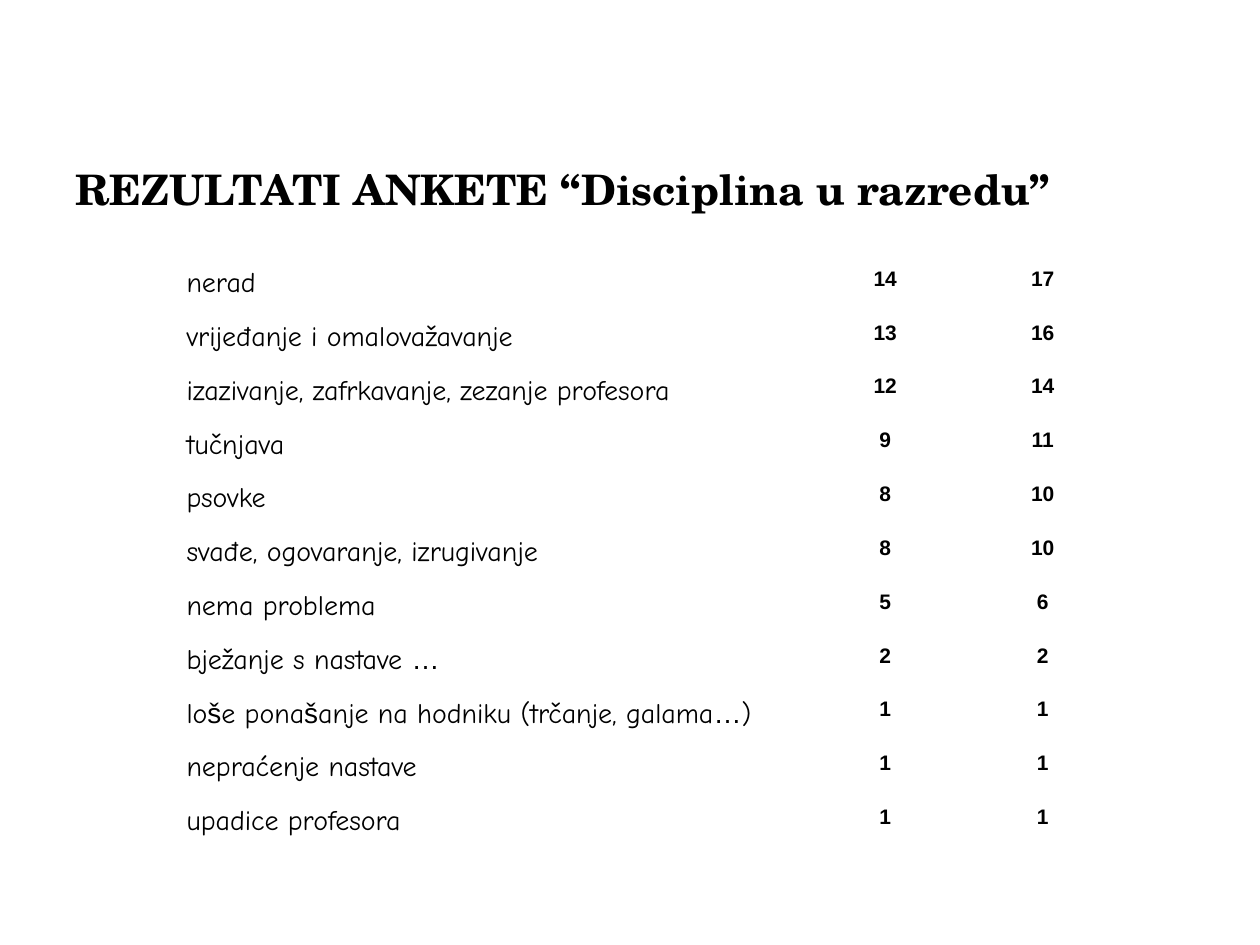
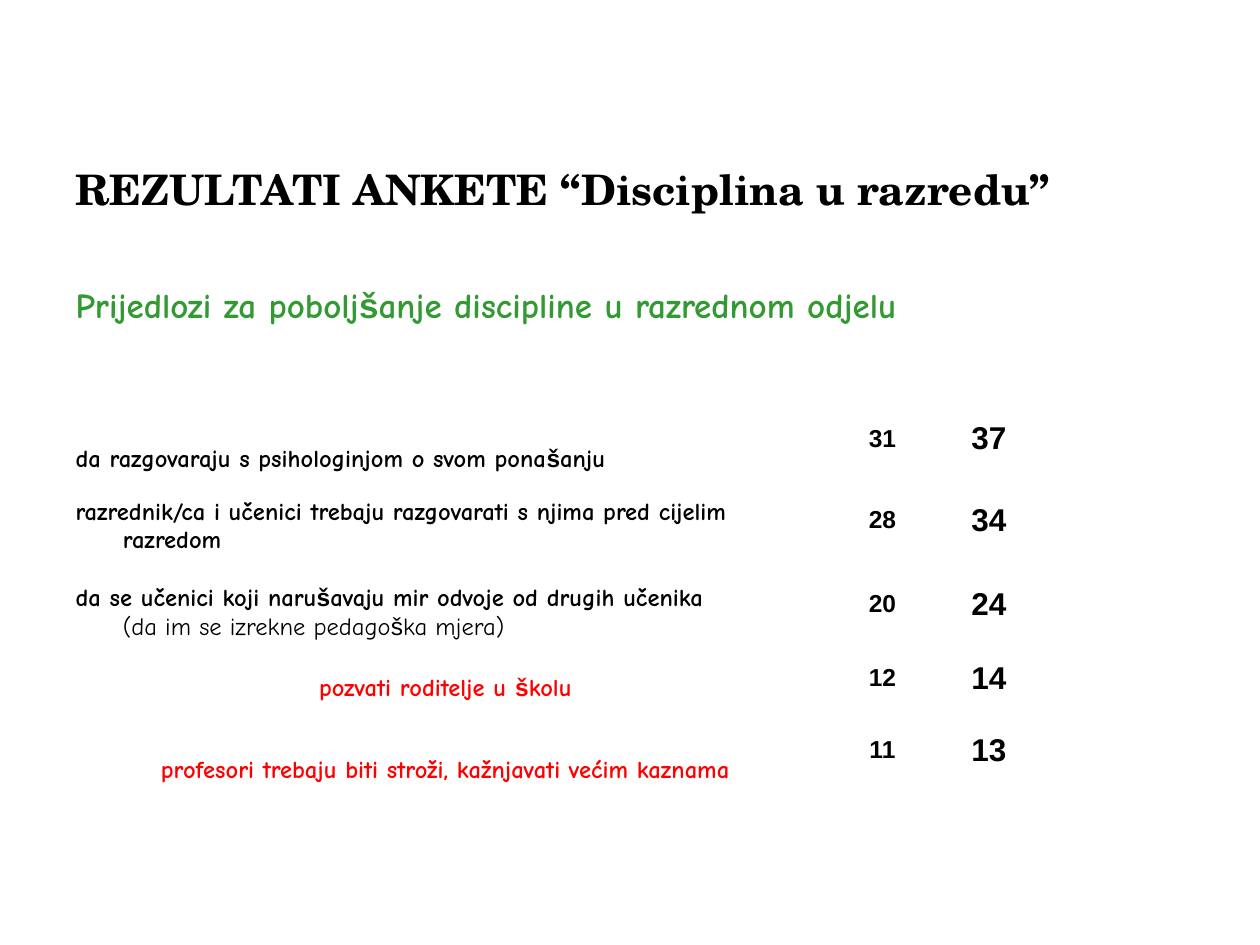
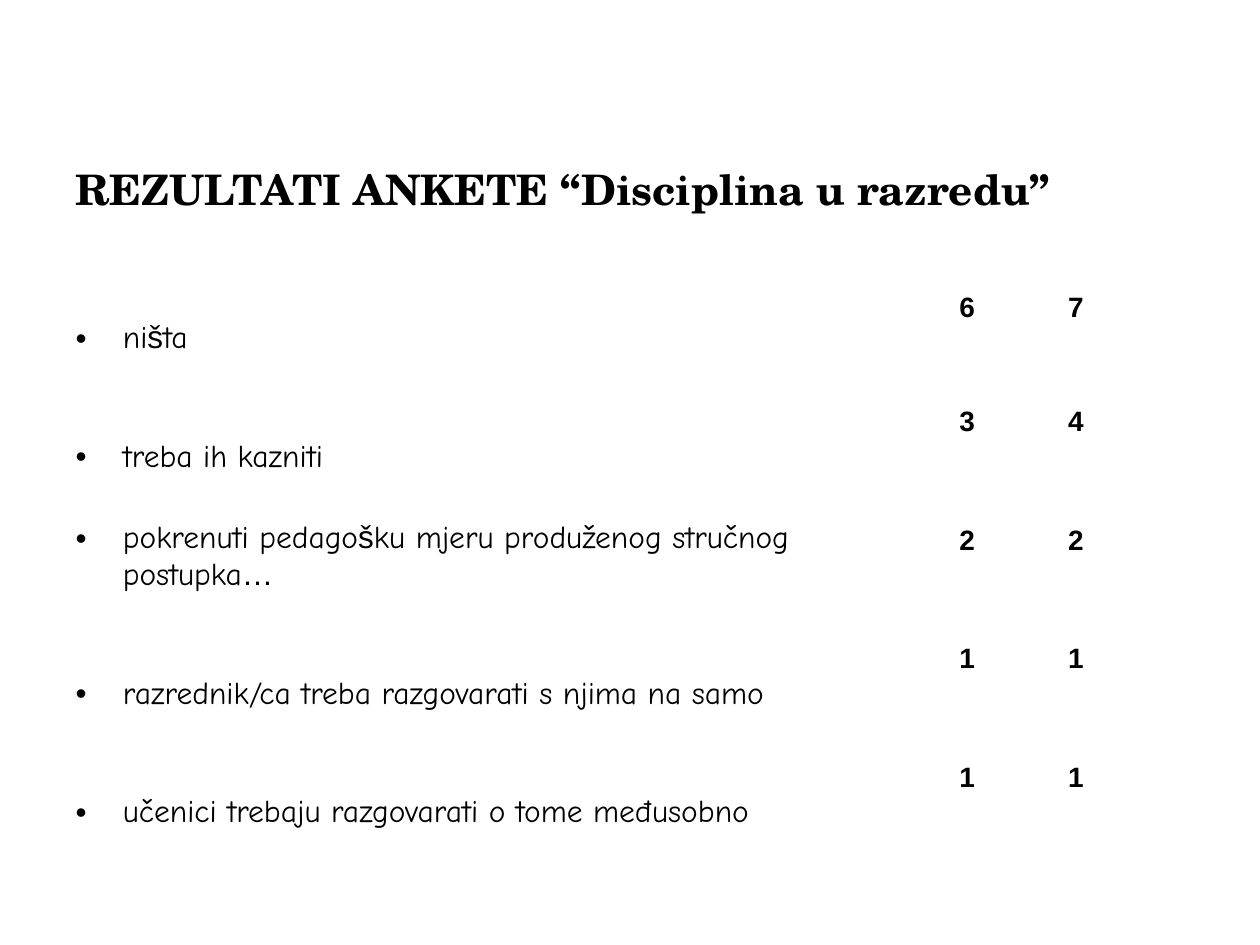
"""Build three slides with the results of a survey on class discipline."""
from itertools import groupby

from lxml.etree import SubElement
from pptx import Presentation
from pptx.dml.color import RGBColor
from pptx.enum.text import MSO_ANCHOR, PP_ALIGN
from pptx.oxml.ns import qn
from pptx.util import Pt

HUES = {"black": "000000", "green": "339933", "red": "FF0000"}
SERIF, SANS, HAND = "TeX Gyre Schola", "Arial", "Comic Neue"
TITLE = "REZULTATI ANKETE “Disciplina u razredu”"
TOP = 144
HANG = 27
LEFT, MID = PP_ALIGN.LEFT, PP_ALIGN.CENTER

LOOKS = {
    "cause": {"size": 16, "bold": False, "hue": "black", "align": LEFT},
    "head": {"size": 20, "bold": True, "hue": "green", "align": LEFT},
    "idea": {"size": 14, "bold": True, "hue": "black", "align": LEFT},
    "harsh": {"size": 14, "bold": True, "hue": "red", "align": MID},
    "point": {"size": 18, "bold": False, "hue": "black", "align": LEFT},
}

CAUSES = [
    ("nerad", 14, 17),
    ("vrijeđanje i omalovažavanje", 13, 16),
    ("izazivanje, zafrkavanje, zezanje profesora", 12, 14),
    ("tučnjava", 9, 11),
    ("psovke", 8, 10),
    ("svađe, ogovaranje, izrugivanje", 8, 10),
    ("nema problema", 5, 6),
    ("bježanje s nastave …", 2, 2),
    ("loše ponašanje na hodniku (trčanje, galama…)", 1, 1),
    ("nepraćenje nastave", 1, 1),
    ("upadice profesora", 1, 1),
]
IDEAS = [
    ("head", 46.8, ("Prijedlozi za poboljšanje discipline u razrednom odjelu",)),
    ("idea", 36.7, ()),
    ("idea", 46.8, ("da razgovaraju s psihologinjom o svom ponašanju", 31, 37)),
    ("idea", 46.1, ("razrednik/ca i učenici trebaju razgovarati s njima "
                    "pred cijelim razredom", 28, 34)),
    ("idea", 49.7, ("da se učenici koji narušavaju mir odvoje od drugih učenika\n"
                    "(da im se izrekne pedagoška mjera)", 20, 24)),
    ("harsh", 35.3, ("pozvati roditelje u školu", 12, 14)),
    ("harsh", 46.8, ("profesori trebaju biti stroži, kažnjavati većim kaznama",
                     11, 13)),
]
POINTS = [
    ("ništa", 6, 7),
    ("treba ih kazniti", 3, 4),
    ("pokrenuti pedagošku mjeru produženog stručnog postupka…", 2, 2),
    ("razrednik/ca treba razgovarati s njima na samo", 1, 1),
    ("učenici trebaju razgovarati o tome međusobno", 1, 1),
]

SLIDES = [
    {"left": 99.4, "cols": (359.3, 94.3, 85.7), "nums": (12, 12),
     "rows": [("cause", 30.76, row) for row in CAUSES]},
    {"left": 36, "cols": (437, 62.6, 59, 16.6, 28.1, 62.6), "nums": (14, 18),
     "rows": IDEAS},
    {"left": 36, "cols": (499.7, 33.8, 90.7), "nums": (16, 16),
     "rows": [("point", 67.7 if i else 63.4, row)
              for i, row in enumerate(POINTS)]},
]


def add_run(para, text, face, size, bold, hue):
    run = para.add_run()
    run.text = text
    font = run.font
    font.name, font.size, font.bold = face, Pt(size), bold
    font.color.rgb = RGBColor.from_string(HUES[hue])


def hang(para, mark):
    props = para._p.get_or_add_pPr()
    props.set("marL", str(Pt(HANG)))
    props.set("indent", str(Pt(-HANG)))
    if mark:
        SubElement(props, qn("a:buFont")).set("typeface", SANS)
        SubElement(props, qn("a:buChar")).set("char", "•")


def put_label(cell, text, look, mark):
    cell.vertical_anchor = MSO_ANCHOR.BOTTOM
    para = cell.text_frame.paragraphs[0]
    hang(para, mark)
    para.alignment = look["align"]
    for i, line in enumerate(text.split("\n")):
        if i:
            para.add_line_break()
        for odd, part in groupby(line, lambda char: char in "š…"):
            add_run(para, "".join(part), SANS if odd else HAND, look["size"],
                    look["bold"] and i == 0, look["hue"])


def put_num(cell, num, size):
    cell.vertical_anchor = MSO_ANCHOR.MIDDLE
    para = cell.text_frame.paragraphs[0]
    hang(para, False)
    para.alignment = MID
    add_run(para, str(num), SANS, size, True, "black")


def add_title(slide):
    title = slide.shapes.title
    title.left, title.top, title.width, title.height = map(Pt, (36, 72, 648, 72))
    title.text_frame.vertical_anchor = MSO_ANCHOR.MIDDLE
    para = title.text_frame.paragraphs[0]
    para.alignment = LEFT
    add_run(para, TITLE, SERIF, 24, True, "black")


def add_grid(slide, left, cols, nums, rows):
    high = sum(row[1] for row in rows)
    grid = slide.shapes.add_table(len(rows), len(cols), Pt(left), Pt(TOP),
                                  Pt(sum(cols)), Pt(high)).table
    grid.first_row = grid.horz_banding = False
    for col, width in zip(grid.columns, cols):
        col.width = Pt(width)
    for cell in grid.iter_cells():
        cell.fill.background()
    for i, (kind, high, data) in enumerate(rows):
        grid.rows[i].height = Pt(high)
        if kind == "head":
            grid.cell(i, 0).merge(grid.cell(i, 3))
        if data:
            put_label(grid.cell(i, 0), data[0], LOOKS[kind], kind == "point")
        for j, (num, size) in enumerate(zip(data[1:], nums), 1):
            put_num(grid.cell(i, j), num, size)


def main():
    deck = Presentation()
    deck.slide_width, deck.slide_height = Pt(720), Pt(540)
    for page in SLIDES:
        slide = deck.slides.add_slide(deck.slide_layouts[5])
        add_title(slide)
        add_grid(slide, **page)
    deck.save("out.pptx")


if __name__ == "__main__":
    main()
